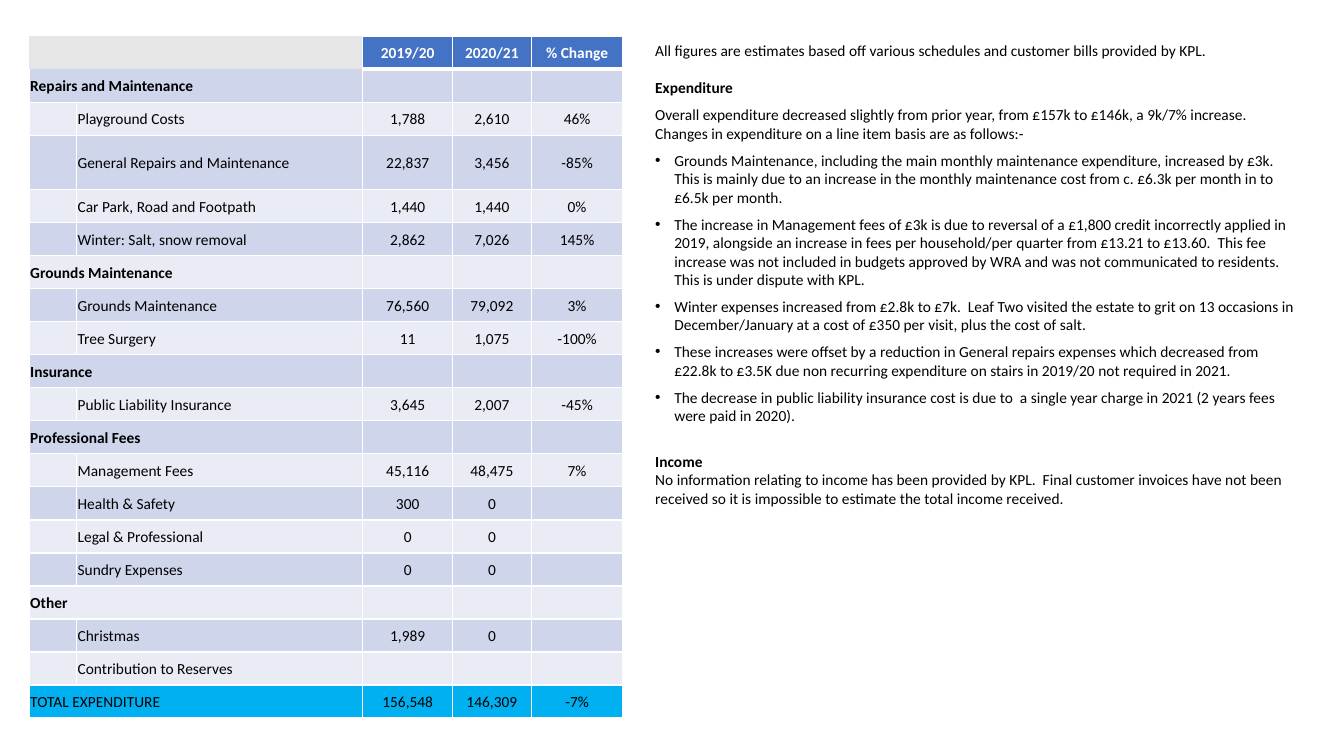
from lxml import etree
from pptx import Presentation
from pptx.dml.color import RGBColor
from pptx.enum.text import MSO_ANCHOR, MSO_AUTO_SIZE, PP_ALIGN
from pptx.oxml.ns import qn
from pptx.util import Inches, Pt

LEFT, CENTER = PP_ALIGN.LEFT, PP_ALIGN.CENTER
MIDDLE = MSO_ANCHOR.MIDDLE
GROW = MSO_AUTO_SIZE.SHAPE_TO_FIT_TEXT

COLORS = {
    "black": "000000",
    "white": "FFFFFF",
    "corner": "E7E6E6",
    "header": "4472C4",
    "band_dark": "CFD5EA",
    "band_light": "E9EBF5",
    "total": "00B0F0",
}

YEARS = ("2019/20", "2020/21", "% Change")
# Section rows hold only a name; cost rows hold a name and three figures.
COSTS = [
    ("Repairs and Maintenance",),
    ("Playground Costs", "1,788", "2,610", "46%"),
    ("General Repairs and Maintenance", "22,837", "3,456", "-85%"),
    ("Car Park, Road and Footpath", "1,440", "1,440", "0%"),
    ("Winter: Salt, snow removal", "2,862", "7,026", "145%"),
    ("Grounds Maintenance",),
    ("Grounds Maintenance", "76,560", "79,092", "3%"),
    ("Tree Surgery", "11", "1,075", "-100%"),
    ("Insurance",),
    ("Public Liability Insurance", "3,645", "2,007", "-45%"),
    ("Professional Fees",),
    ("Management Fees", "45,116", "48,475", "7%"),
    ("Health & Safety", "300", "0", ""),
    ("Legal & Professional", "0", "0", ""),
    ("Sundry Expenses", "0", "0", ""),
    ("Other",),
    ("Christmas", "1,989", "0", ""),
    ("Contribution to Reserves", "", "", ""),
]
TOTAL = ("TOTAL EXPENDITURE", "156,548", "146,309", "-7%")

COL_WIDTHS = (0.47, 1.77, 1.07, 0.89, 0.78, 0.91)
TABLE_HEIGHT = 6.77
TALL_ROW, TALL_HEIGHT = 3, 0.54

# Text, space before in points, bold, bullet
COMMENTARY = [
    ("All figures are estimates based off various schedules and customer bills "
     "provided by KPL.", 0, False, False),
    ("Expenditure", 13.4, True, False),
    ("Overall expenditure decreased slightly from prior year, from £157k to £146k, "
     "a 9k/7% increase.  Changes in expenditure on a line item basis are as "
     "follows:-", 6, False, False),
    ("Grounds Maintenance, including the main monthly maintenance expenditure, "
     "increased by £3k. This is mainly due to an increase in the monthly maintenance "
     "cost from c. £6.3k per month in to £6.5k per month.", 6, False, True),
    ("The increase in Management fees of £3k is due to reversal of a £1,800 credit "
     "incorrectly applied in 2019, alongside an increase in fees per household/per "
     "quarter from £13.21 to £13.60.  This fee increase was not included in budgets "
     "approved by WRA and was not communicated to residents. This is under dispute "
     "with KPL.", 6, False, True),
    ("Winter expenses increased from £2.8k to £7k.  Leaf Two visited the estate to "
     "grit on 13 occasions in December/January at a cost of £350 per visit, plus the "
     "cost of salt.", 6, False, True),
    ("These increases were offset by a reduction in General repairs expenses which "
     "decreased from £22.8k to £3.5K due non recurring expenditure on stairs in "
     "2019/20 not required in 2021.", 6, False, True),
    ("The decrease in public liability insurance cost is due to  a single year charge "
     "in 2021 (2 years fees were paid in 2020).", 6, False, True),
    ("Income", 19.4, True, False),
    ("No information relating to income has been provided by KPL.  Final customer "
     "invoices have not been received so it is impossible to estimate the total "
     "income received.", 0, False, False),
]


def rgb(name):
    return RGBColor.from_string(COLORS[name])


class SlideBuilder:
    def __init__(self, slide, font="Calibri", size=11):
        self.slide, self.font, self.size = slide, font, size

    def run(self, p, text, color="black", bold=False):
        r = p.add_run()
        r.text = text
        r.font.name, r.font.size, r.font.bold = self.font, Pt(self.size), bold
        r.font.color.rgb = rgb(color)

    def borders(self, cell, widths):
        """Set left, right, top and bottom borders; a width of 0 draws none."""
        tc_pr = cell._tc.get_or_add_tcPr()
        for i, (side, width) in enumerate(zip("LRTB", widths)):
            ln = etree.Element(qn(f"a:ln{side}"), w=str(Pt(width)))
            if width:
                fill = etree.SubElement(ln, qn("a:solidFill"))
                etree.SubElement(fill, qn("a:srgbClr"), val=COLORS["white"])
            else:
                etree.SubElement(ln, qn("a:noFill"))
            tc_pr.insert(i, ln)

    def cell(self, cell, fill, text="", align=LEFT, color="black", bold=False,
             widths=(1, 1, 1, 1)):
        cell.margin_left = cell.margin_right = cell.margin_top = Inches(0.01)
        cell.margin_bottom = 0
        cell.vertical_anchor = MIDDLE
        cell.fill.solid()
        cell.fill.fore_color.rgb = rgb(fill)
        self.borders(cell, widths)
        if text:
            p = cell.text_frame.paragraphs[0]
            p.alignment = align
            self.run(p, text, color, bold)

    def cost_row(self, table, i, row, fill, indented):
        name, *figures = row
        name_col = 1 if indented else 0
        for col in range(3):
            self.cell(table.cell(i, col), fill, name if col == name_col else "",
                      bold=len(row) == 1, widths=(1, 1, 0 if i == 1 else 1, 1))
        table.cell(i, name_col).merge(table.cell(i, 2))
        for col, figure in enumerate(figures or [""] * 3, 3):
            self.cell(table.cell(i, col), fill, figure, CENTER,
                      widths=(1, 1, 3 if i == 1 else 1, 1))

    def cost_table(self, left, top):
        n_rows = len(COSTS) + 2
        table = self.slide.shapes.add_table(
            n_rows, len(COL_WIDTHS), Inches(left), Inches(top),
            Inches(sum(COL_WIDTHS)), Inches(TABLE_HEIGHT)).table
        table.horz_banding = False
        for column, width in zip(table.columns, COL_WIDTHS):
            column.width = Inches(width)
        row_height = (TABLE_HEIGHT - TALL_HEIGHT) / (n_rows - 1)
        for i, row in enumerate(table.rows):
            row.height = Inches(TALL_HEIGHT if i == TALL_ROW else row_height)

        for col in range(3):
            self.cell(table.cell(0, col), "corner", widths=(0, 0, 0, 0))
        table.cell(0, 0).merge(table.cell(0, 1))
        for col, year in enumerate(YEARS, 3):
            self.cell(table.cell(0, col), "header", year, CENTER, "white", True,
                      (1, 1, 1, 3))
        for i, row in enumerate(COSTS, 1):
            fill = "band_dark" if i % 2 else "band_light"
            self.cost_row(table, i, row, fill, indented=len(row) > 1)
        self.cost_row(table, n_rows - 1, TOTAL, "total", indented=False)

    def bullet(self, p):
        p_pr = p._p.get_or_add_pPr()
        p_pr.set("marL", str(Inches(0.19)))
        p_pr.set("indent", str(-Inches(0.19)))
        etree.SubElement(p_pr, qn("a:buFont"), typeface="Arial")
        etree.SubElement(p_pr, qn("a:buChar"), char="•")

    def commentary(self, left, top, width, height):
        sp = self.slide.shapes.add_textbox(
            Inches(left), Inches(top), Inches(width), Inches(height))
        tf = sp.text_frame
        tf.word_wrap = True
        tf.auto_size = GROW
        for i, (text, space, bold, bulleted) in enumerate(COMMENTARY):
            p = tf.add_paragraph() if i else tf.paragraphs[0]
            p.space_before = Pt(space)
            if bulleted:
                self.bullet(p)
            self.run(p, text, bold=bold)


def main():
    prs = Presentation()
    prs.slide_width, prs.slide_height = Inches(13.33), Inches(7.5)
    s = SlideBuilder(prs.slides.add_slide(prs.slide_layouts[6]))
    s.cost_table(0.29, 0.36)
    s.commentary(6.4, 0.36, 6.55, 5.57)
    prs.save("out.pptx")


if __name__ == "__main__":
    main()
